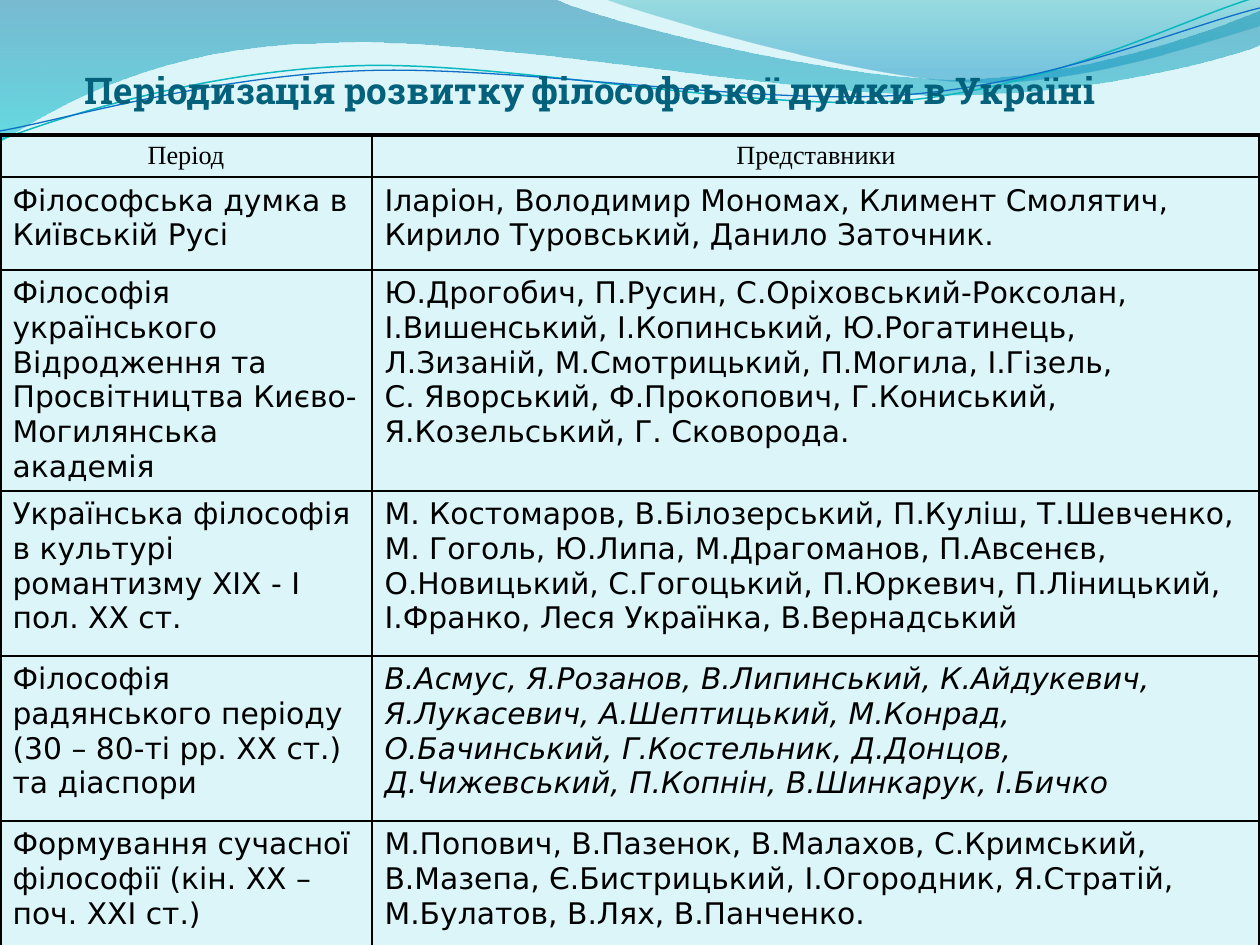
"""Build a slide with a table of the periods of philosophical thought in Ukraine."""
import lxml.etree
import pptx
import pptx.dml.color
import pptx.enum.text
import pptx.oxml.ns
import pptx.util

PX = 7257.6
NO_BREAK_SPACE = chr(160)
qn = pptx.oxml.ns.qn
ALIGN = pptx.enum.text.PP_ALIGN
THEME = {
    "background": "DBF5F9", "title": "04617B", "text": "000000",
    "teal line": "0AB8BF", "blue line": "0F6FC6",
    "title font": "Roboto Slab", "header font": "Times New Roman", "body font": "DejaVu Sans",
    "title size": 21, "header size": 15, "body size": 17,
    "outer border": 2.25, "inner border": 1,
}


def style_font(font, role, color):
    font.name = THEME[f"{role} font"]
    font.size = pptx.util.Pt(THEME[f"{role} size"])
    font.color.rgb = pptx.dml.color.RGBColor.from_string(THEME[color])


def add_curve(shapes, start, segments, closed):
    points = [pair for segment in segments for pair in zip(segment[::2], segment[1::2])]
    builder = shapes.build_freeform(*[round(value * PX) for value in start], scale=1.0)
    builder.add_line_segments([(round(x * PX), round(y * PX)) for x, y in points], close=closed)
    shape = builder.convert_to_shape()
    shape.shadow.inherit = False
    lines = iter(list(shape._element.iter(qn("a:lnTo"))))
    for segment in segments:
        line = next(lines)
        if len(segment) == 6:
            curve = lxml.etree.Element(qn("a:cubicBezTo"))
            line.addprevious(curve)
            for control in (line, next(lines), next(lines)):
                curve.append(control[0])
                control.getparent().remove(control)
    return shape


presentation = pptx.Presentation()
presentation.slide_width = round(1260 * PX)
presentation.slide_height = round(945 * PX)
slide = presentation.slides.add_slide(presentation.slide_layouts[6])
slide.background.fill.solid()
slide.background.fill.fore_color.rgb = pptx.dml.color.RGBColor.from_string(THEME["background"])

bands = [
    ((0, 0), [(554, -1), (600, 21, 837, 79, 955, 79), (1075, 79, 1207, 33, 1260, 11), (1261, 45),
              (1239, 55, 1096, 96, 940, 95), (784, 95, 481, 35, 324, 43), (163, 45, 58, 105, -1, 142)],
     [(0, "0074A1", 45), (1, "00C6CF", 55)]),
    ((604, -1), [(641, 14, 859, 78, 969, 82), (1079, 87, 1211, 40, 1260, 26), (1260, 0)],
     [(0, "00A1A9", 30), (0.8, "008BBF", 45)]),
]
for start, segments, stops in bands:
    band = add_curve(slide.shapes, start, segments, True)
    band.line.fill.background()
    band.fill.gradient()
    band.fill.gradient_angle = 270
    for gradient_stop, (position, color, opacity) in zip(band.fill.gradient_stops, stops):
        gradient_stop.position = position
        gradient_stop.color.rgb = pptx.dml.color.RGBColor.from_string(color)
    for color_element, (position, color, opacity) in zip(band._element.iter(qn("a:srgbClr")), stops):
        lxml.etree.SubElement(color_element, qn("a:alpha"), val=str(opacity * 1000))

waves = [
    ((0, 140), [(60, 117, 199, 72, 349, 66), (498, 59, 747, 112, 898, 101),
                (1050, 89, 1182, 19, 1257, -3)], "teal line", 0.85),
    ((0, 131), [(59, 121, 207, 77, 357, 71), (508, 64, 752, 106, 903, 95),
                (1053, 84, 1186, 26, 1260, 8)], "blue line", 0.75),
]
for start, segments, color, width in waves:
    wave = add_curve(slide.shapes, start, segments, False)
    wave.fill.background()
    wave.line.color.rgb = pptx.dml.color.RGBColor.from_string(THEME[color])
    wave.line.width = pptx.util.Pt(width)

title = slide.shapes.add_textbox(*[round(value * PX) for value in (85, 0, 1102, 112)])
frame = title.text_frame
frame.word_wrap = True
frame.vertical_anchor = pptx.enum.text.MSO_ANCHOR.BOTTOM
frame.margin_left = frame.margin_right = frame.margin_bottom = 0
paragraph = frame.paragraphs[0]
paragraph.text = "Періодизація розвитку філософської думки в Україні"
paragraph.font.bold = True
style_font(paragraph.font, "title", "title")

rows = [
    (42, "Період", "Представники"),
    (93, "Філософська думка в Київській Русі",
     "Іларіон, Володимир Мономах, Климент Смолятич, Кирило Туровський, Данило Заточник."),
    (221, "Філософія українського Відродження та Просвітництва Києво-Могилянська академія",
     "Ю.Дрогобич, П.Русин, С.Оріховський-Роксолан, І.Вишенський, І.Копинський, Ю.Рогатинець, "
     "Л.Зизаній, М.Смотрицький, П.Могила, І.Гізель, С. Яворський, Ф.Прокопович, Г.Кониський, "
     "Я.Козельський, Г. Сковорода."),
    (165, "Українська філософія в культурі романтизму XIX - І пол. XX ст.",
     "М. Костомаров, В.Білозерський, П.Куліш, Т.Шевченко, М. Гоголь, Ю.Липа, М.Драгоманов, "
     "П.Авсенєв, О.Новицький, С.Гогоцький, П.Юркевич, П.Ліницький, І.Франко, Леся Українка, "
     "В.Вернадський"),
    (165, "Філософія радянського періоду (30 – 80-ті рр. XX ст.) та діаспори",
     "В.Асмус, Я.Розанов, В.Липинський, К.Айдукевич, Я.Лукасевич, А.Шептицький, М.Конрад, "
     "О.Бачинський, Г.Костельник, Д.Донцов, Д.Чижевський, П.Копнін, В.Шинкарук, І.Бичко"),
    (134, "Формування сучасної філософії (кін. XX – поч. XXI ст.)",
     "М.Попович, В.Пазенок, В.Малахов, С.Кримський, В.Мазепа, Є.Бистрицький, І.Огородник, "
     "Я.Стратій, М.Булатов, В.Лях, В.Панченко."),
]
diaspora_row, last_row = 4, len(rows) - 1
table_height = sum(row[0] for row in rows)
table = slide.shapes.add_table(
    len(rows), 2, 0, round(135 * PX), round(1260 * PX), round(table_height * PX)).table
table.first_row = table.horz_banding = False
for column, width in zip(table.columns, (372, 888)):
    column.width = round(width * PX)
for row_index, (height, period, names) in enumerate(rows):
    table.rows[row_index].height = round(height * PX)
    for column_index, text in enumerate((period, names.replace(". ", "." + NO_BREAK_SPACE))):
        cell = table.cell(row_index, column_index)
        cell.fill.background()
        cell.margin_bottom = 0
        paragraph = cell.text_frame.paragraphs[0]
        paragraph.text = text
        paragraph.alignment = ALIGN.CENTER if row_index == 0 else ALIGN.LEFT
        paragraph.font.italic = (row_index, column_index) == (diaspora_row, 1)
        style_font(paragraph.font, "header" if row_index == 0 else "body", "text")
        edges = {"lnL": column_index == 0, "lnR": column_index == 1,
                 "lnT": row_index == 0, "lnB": row_index == last_row}
        properties = cell._tc.get_or_add_tcPr()
        for order, (edge, is_outer) in enumerate(edges.items()):
            width = THEME["outer border" if is_outer else "inner border"]
            border = lxml.etree.Element(qn(f"a:{edge}"), w=str(pptx.util.Pt(width)))
            fill = lxml.etree.SubElement(border, qn("a:solidFill"))
            lxml.etree.SubElement(fill, qn("a:srgbClr"), val=THEME["text"])
            properties.insert(order, border)

presentation.save("out.pptx")
